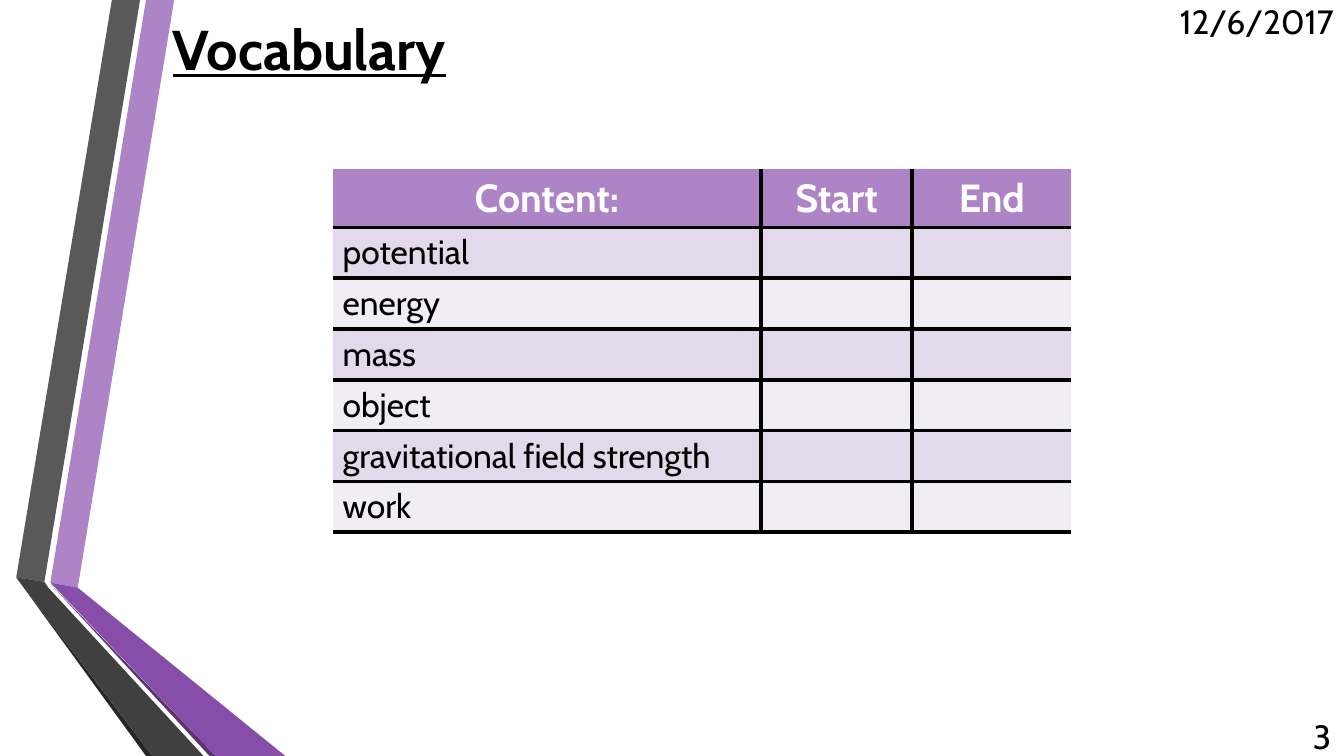
"""Build the vocabulary slide with its folded ribbons and checklist table."""
import pptx
import pptx.dml.color
import pptx.enum.text
import pptx.oxml
import pptx.oxml.ns
import pptx.util

Cm = pptx.util.Cm
Pt = pptx.util.Pt
ALIGN = pptx.enum.text.PP_ALIGN
MIDDLE = pptx.enum.text.MSO_ANCHOR.MIDDLE


def color(value):
    return pptx.dml.color.RGBColor.from_string(value)


def write(frame, text, size, ink, align, bold=False):
    para = frame.paragraphs[0]
    para.text = text
    para.alignment = align
    para.font.size = Pt(size)
    for span in para.runs:
        span.font.name = "Cabin"
        span.font.size = Pt(size)
        span.font.bold = bold
        span.font.color.rgb = color(ink)


deck = pptx.Presentation()
deck.slide_width = Cm(33.87)
deck.slide_height = Cm(19.05)
page = deck.slides.add_slide(deck.slide_layouts[6])

ribbons = [
    ("AD84C6", [(1.27, 14.68), (1.96, 14.81), (4.39, 0), (3.68, 0)]),
    ("595959", [(3.53, 0), (2.82, 0), (0.41, 14.55), (1.12, 14.66)]),
    ("262626", [(0.41, 14.55), (3.68, 19.05), (3.84, 19.05)]),
    ("5A3471", [(1.27, 14.71), (5.28, 19.05), (5.44, 19.05)]),
    ("874EA9", [(1.27, 14.68), (5.44, 19.05), (7.19, 19.05), (1.96, 14.81)]),
    ("404040", [(0.41, 14.55), (3.84, 19.05), (5.13, 19.05), (1.22, 14.81),
                (1.12, 14.66)]),
]
for fill, corners in ribbons:
    points = [(Cm(x), Cm(y)) for x, y in corners]
    builder = page.shapes.build_freeform(*points[0])
    builder.add_line_segments(points[1:], close=True)
    ribbon = builder.convert_to_shape()
    ribbon.shadow.inherit = False
    ribbon.fill.solid()
    ribbon.fill.fore_color.rgb = color(fill)
    ribbon.line.fill.background()

labels = [
    ("Vocabulary", 4.11, 0.03, 27.84, 2.34, 40, ALIGN.LEFT),
    ("12/6/2017", 28.68, 0.03, 5.18, 1.02, 24, ALIGN.RIGHT),
    ("3", 31.95, 18.03, 1.85, 1.02, 24, ALIGN.RIGHT),
]
for text, left, top, width, height, size, align in labels:
    box = page.shapes.add_textbox(Cm(left), Cm(top), Cm(width), Cm(height))
    frame = box.text_frame
    frame.word_wrap = True
    frame.vertical_anchor = MIDDLE
    is_title = text == "Vocabulary"
    write(frame, text, size, "000000", align, bold=is_title)
    frame.paragraphs[0].runs[0].font.underline = is_title

headings = ["Content:", "Start", "End"]
words = ["potential", "energy", "mass", "object", "gravitational field strength", "work"]
column_widths = [10.8, 3.81, 4.01]
header_height, row_height = 1.46, 1.28
rows = [headings] + [[word, "", ""] for word in words]
last_column = len(headings) - 1

table = page.shapes.add_table(
    len(rows), len(headings), Cm(8.38), Cm(4.27),
    Cm(sum(column_widths)), Cm(header_height + row_height * len(words))).table
for column, width in zip(table.columns, column_widths):
    column.width = Cm(width)

for row_index, texts in enumerate(rows):
    is_header = row_index == 0
    table.rows[row_index].height = Cm(header_height if is_header else row_height)
    for column_index, text in enumerate(texts):
        cell = table.cell(row_index, column_index)
        cell.fill.solid()
        if is_header:
            cell.fill.fore_color.rgb = color("AD84C6")
            cell.vertical_anchor = MIDDLE
            write(cell.text_frame, text, 28, "FFFFFF", ALIGN.CENTER, bold=True)
        else:
            cell.fill.fore_color.rgb = color("E3D9EA" if row_index % 2 else "F1EDF5")
            write(cell.text_frame, text, 24, "000000", ALIGN.LEFT)

        borders = [("lnL", column_index > 0), ("lnR", column_index < last_column),
                   ("lnT", not is_header), ("lnB", True)]
        properties = cell._tc.get_or_add_tcPr()
        for position, (side, visible) in enumerate(borders):
            paint = ('<a:solidFill><a:srgbClr val="000000"/></a:solidFill>'
                     if visible else "<a:noFill/>")
            properties.insert(position, pptx.oxml.parse_xml(
                f'<a:{side} {pptx.oxml.ns.nsdecls("a")} w="{Pt(3)}">{paint}</a:{side}>'))

deck.save("out.pptx")
